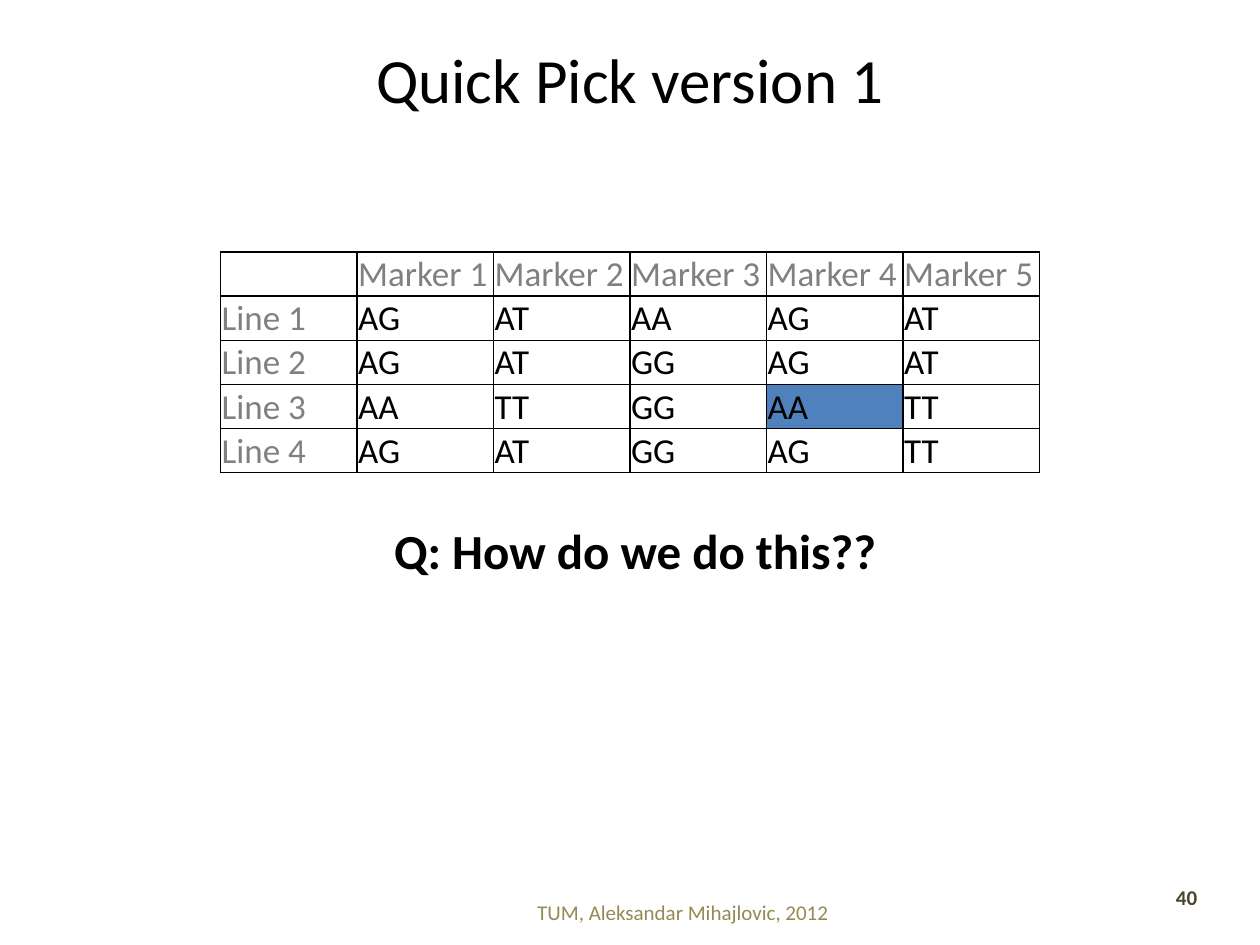
from dataclasses import dataclass

import lxml.etree
import pptx
import pptx.dml.color
import pptx.enum.text
import pptx.oxml.ns
import pptx.util

RGBColor = pptx.dml.color.RGBColor
Align = pptx.enum.text.PP_ALIGN
Anchor = pptx.enum.text.MSO_ANCHOR
Inches = pptx.util.Inches

BLACK = RGBColor(0x00, 0x00, 0x00)
GRAY = RGBColor(0x80, 0x80, 0x80)
BLUE = RGBColor(0x4F, 0x81, 0xBD)
TAN = RGBColor(0x94, 0x8A, 0x54)
DARK_TAN = RGBColor(0x4A, 0x45, 0x2A)
FONT = "Calibri"

WIDTH, HEIGHT = 10, 7.5
TABLE_LEFT, TABLE_TOP, TABLE_WIDTH, ROW_HEIGHT = 1.75, 2, 6.5, 0.35
GENOTYPES = {
    "Line 1": ["AG", "AT", "AA", "AG", "AT"],
    "Line 2": ["AG", "AT", "GG", "AG", "AT"],
    "Line 3": ["AA", "TT", "GG", "AA", "TT"],
    "Line 4": ["AG", "AT", "GG", "AG", "TT"],
}
HIGHLIGHT = (3, 4)


@dataclass(frozen=True)
class Label:
    text: str
    left: float
    top: float
    width: float
    height: float
    size: int
    color: RGBColor = BLACK
    bold: bool = False
    align: Align = Align.CENTER
    anchor: Anchor = Anchor.MIDDLE


LABELS = [
    Label("Quick Pick version 1", 0.5, 0, 9, 1.25, 36),
    Label("TUM, Aleksandar Mihajlovic, 2012", 2.53, 7.04, 5.78, 0.39, 12, TAN),
    Label("40", 8.71, 6.97, 0.89, 0.39, 12, DARK_TAN, True, Align.RIGHT, Anchor.TOP),
    Label("Q: How do we do this??", 1.75, 4.08, 6.58, 0.57, 28, bold=True, anchor=Anchor.TOP),
]


def style_paragraph(para, size: int, color: RGBColor, bold: bool = False) -> None:
    para.font.name = FONT
    para.font.size = pptx.util.Pt(size)
    para.font.bold = bold
    para.font.color.rgb = color


def add_label(page, label: Label) -> None:
    box = page.shapes.add_textbox(
        Inches(label.left), Inches(label.top), Inches(label.width), Inches(label.height)
    )
    frame = box.text_frame
    frame.word_wrap = True
    frame.vertical_anchor = label.anchor
    para = frame.paragraphs[0]
    para.text = label.text
    para.alignment = label.align
    style_paragraph(para, label.size, label.color, label.bold)


def add_borders(cell) -> None:
    """Outline all four sides; must run before the cell gets its fill."""
    properties = cell._tc.get_or_add_tcPr()
    qn = pptx.oxml.ns.qn
    for side in ("a:lnL", "a:lnR", "a:lnT", "a:lnB"):
        line = lxml.etree.SubElement(properties, qn(side), w=str(pptx.util.Pt(1)))
        fill = lxml.etree.SubElement(line, qn("a:solidFill"))
        lxml.etree.SubElement(fill, qn("a:srgbClr"), val=str(BLACK))


def fill_cell(cell, text: str, color: RGBColor, highlighted: bool) -> None:
    cell.margin_left = cell.margin_right = cell.margin_top = Inches(0.01)
    cell.margin_bottom = 0
    cell.vertical_anchor = Anchor.BOTTOM
    para = cell.text_frame.paragraphs[0]
    if text:
        para.text = text
    style_paragraph(para, 20, color)
    add_borders(cell)
    if highlighted:
        cell.fill.solid()
        cell.fill.fore_color.rgb = BLUE
    else:
        cell.fill.background()


def add_genotype_table(page) -> None:
    header = [""] + [f"Marker {number}" for number in range(1, 6)]
    rows = [header] + [[name, *values] for name, values in GENOTYPES.items()]
    table = page.shapes.add_table(
        len(rows), len(header), Inches(TABLE_LEFT), Inches(TABLE_TOP),
        Inches(TABLE_WIDTH), Inches(ROW_HEIGHT * len(rows)),
    ).table
    table.first_row = table.horz_banding = False
    for row, values in enumerate(rows):
        for column, text in enumerate(values):
            color = GRAY if row == 0 or column == 0 else BLACK
            fill_cell(table.cell(row, column), text, color, (row, column) == HIGHLIGHT)


def main() -> None:
    deck = pptx.Presentation()
    deck.slide_width, deck.slide_height = Inches(WIDTH), Inches(HEIGHT)
    page = deck.slides.add_slide(deck.slide_layouts[6])
    add_genotype_table(page)
    for label in LABELS:
        add_label(page, label)
    deck.save("out.pptx")


if __name__ == "__main__":
    main()
